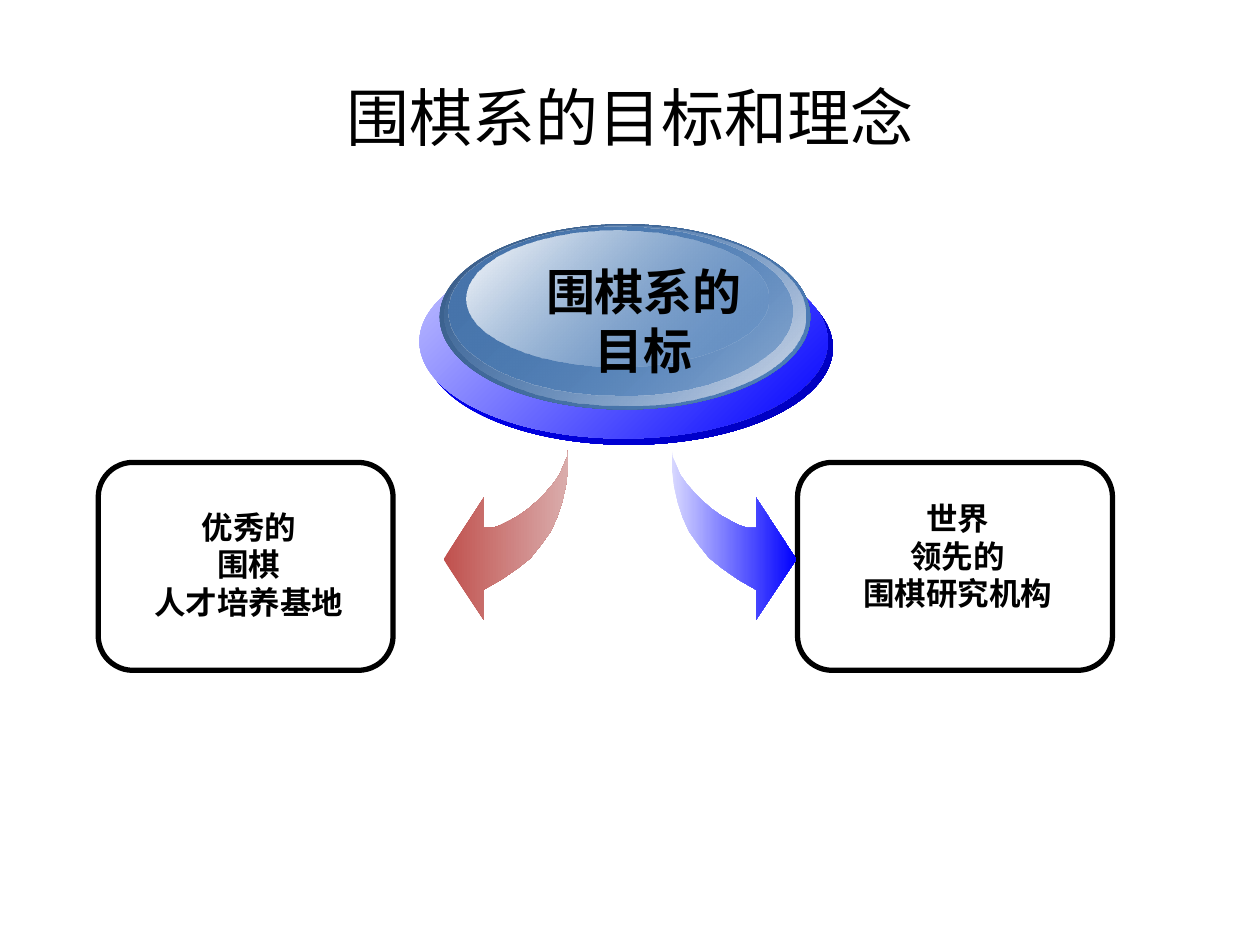
"""Build the slide on the goals and ideas of the Go department."""
from dataclasses import dataclass

from lxml import etree
from pptx import Presentation
from pptx.dml.color import RGBColor
from pptx.enum.shapes import MSO_SHAPE
from pptx.enum.text import MSO_ANCHOR, MSO_AUTO_SIZE, PP_ALIGN
from pptx.oxml.ns import qn
from pptx.util import Inches, Pt

OVAL = MSO_SHAPE.OVAL
ROUNDED = MSO_SHAPE.ROUNDED_RECTANGLE
CENTER = PP_ALIGN.CENTER
MIDDLE = MSO_ANCHOR.MIDDLE
FIT_SHAPE = MSO_AUTO_SIZE.SHAPE_TO_FIT_TEXT

BLACK = RGBColor(0x00, 0x00, 0x00)
WHITE = RGBColor(0xFF, 0xFF, 0xFF)
BLUE = RGBColor(0x00, 0x00, 0xFF)
DARK_BLUE = RGBColor(0x00, 0x00, 0xBA)
LILAC = RGBColor(0xC6, 0xC6, 0xFF)
PALE_BLUE = RGBColor(0xD8, 0xD8, 0xFF)
STEEL = RGBColor(0x4F, 0x81, 0xBD)
MID_STEEL = RGBColor(0x47, 0x75, 0xAB)
DARK_STEEL = RGBColor(0x39, 0x5C, 0x87)
PALE_STEEL = RGBColor(0xD7, 0xDE, 0xEB)
RED = RGBColor(0xC0, 0x50, 0x4D)
PALE_RED = RGBColor(0xDA, 0xAD, 0xAC)

TITLE_FORMAT = {"name": "Calibri", "size": Pt(36), "bold": False}
GOAL_FORMAT = {"name": "Calibri", "size": Pt(28), "bold": True}
BRANCH_FORMAT = {"name": "Arial", "size": Pt(18), "bold": True}

ARROW_POINTS = [
    (451, 356), (451, 371), (449, 386), (446, 399), (442, 411), (437, 422),
    (429, 433), (421, 443), (411, 451), (398, 460), (384, 468), (384, 492),
    (352, 444), (384, 395), (384, 419), (391, 419), (397, 417), (405, 413),
    (412, 409), (419, 404), (426, 398), (433, 391), (439, 384), (444, 377),
    (447, 370), (450, 363),
]
MIRROR_SUM = 984


@dataclass(frozen=True)
class Box:
    left: float
    top: float
    width: float
    height: float

    def lengths(self) -> list:
        return [Inches(v) for v in (self.left, self.top, self.width, self.height)]


@dataclass(frozen=True)
class Stop:
    color: RGBColor
    opacity: int = 100


@dataclass(frozen=True)
class Disc:
    box: Box
    start: Stop
    end: Stop


@dataclass(frozen=True)
class Label:
    box: Box
    lines: tuple
    font_format: dict
    wrap: bool = True


DISCS = [
    Disc(Box(3.37, 1.99, 3.24, 1.54), Stop(BLUE), Stop(DARK_BLUE)),
    Disc(Box(3.33, 1.94, 3.24, 1.54), Stop(LILAC), Stop(BLUE)),
    Disc(Box(3.49, 1.78, 2.94, 1.47), Stop(DARK_STEEL), Stop(STEEL)),
    Disc(Box(3.53, 1.79, 2.86, 1.43), Stop(STEEL, 0), Stop(PALE_STEEL)),
    Disc(Box(3.56, 1.8, 2.73, 1.34), Stop(MID_STEEL), Stop(STEEL, 48)),
    Disc(Box(3.7, 1.83, 2.4, 1.08), Stop(WHITE), Stop(STEEL, 38)),
]
FRAMES = [Box(6.33, 3.67, 2.5, 1.65), Box(0.78, 3.67, 2.34, 1.65)]
LABELS = [
    Label(Box(0.86, 3.98, 2.23, 1.01), ("优秀的", "围棋", "人才培养基地"), BRANCH_FORMAT),
    Label(Box(4.22, 2.03, 1.78, 1.04), ("围棋系的", "目标"), GOAL_FORMAT, False),
    Label(Box(6.25, 3.91, 2.7, 1.01), ("世界", "领先的", "围棋研究机构"), BRANCH_FORMAT),
]


def write_lines(frame, lines: tuple, font_format: dict) -> None:
    frame.text = "\n".join(lines)
    for paragraph in frame.paragraphs:
        paragraph.alignment = CENTER
        font = paragraph.runs[0].font
        for key, value in font_format.items():
            setattr(font, key, value)
        font.color.rgb = BLACK


def paint_gradient(shape, start: Stop, end: Stop, angle: int) -> None:
    shape.shadow.inherit = False
    shape.line.fill.background()
    shape.fill.gradient()
    shape.fill.gradient_angle = angle
    for gradient_stop, stop in zip(shape.fill.gradient_stops, (start, end)):
        gradient_stop.color.rgb = stop.color
    colors = shape.element.spPr.iter(qn("a:srgbClr"))
    for color, stop in zip(list(colors), (start, end)):
        if stop.opacity < 100:
            etree.SubElement(color, qn("a:alpha"), val=str(stop.opacity * 1000))


def add_frame(slide, box: Box) -> None:
    frame = slide.shapes.add_shape(ROUNDED, *box.lengths())
    frame.shadow.inherit = False
    frame.fill.background()
    frame.line.color.rgb = BLACK
    frame.line.width = Pt(3)


def add_arrow(slide, points: list, start: Stop, end: Stop) -> None:
    builder = slide.shapes.build_freeform(*points[0], scale=Inches(0.01))
    builder.add_line_segments(points[1:], close=True)
    paint_gradient(builder.convert_to_shape(), start, end, 0)


def add_disc(slide, disc: Disc) -> None:
    oval = slide.shapes.add_shape(OVAL, *disc.box.lengths())
    paint_gradient(oval, disc.start, disc.end, 315)


def add_label(slide, label: Label) -> None:
    frame = slide.shapes.add_textbox(*label.box.lengths()).text_frame
    frame.word_wrap = label.wrap
    frame.auto_size = FIT_SHAPE
    write_lines(frame, label.lines, label.font_format)


def main() -> None:
    deck = Presentation()
    deck.slide_width, deck.slide_height = Inches(10), Inches(7.5)
    slide = deck.slides.add_slide(deck.slide_layouts[5])

    title = slide.shapes.title
    title.left, title.top, title.width, title.height = Box(0.5, 0.3, 9, 1.25).lengths()
    title.text_frame.vertical_anchor = MIDDLE
    write_lines(title.text_frame, ("围棋系的目标和理念",), TITLE_FORMAT)

    for box in FRAMES:
        add_frame(slide, box)
    mirrored = [(MIRROR_SUM - x, y) for x, y in ARROW_POINTS]
    add_arrow(slide, ARROW_POINTS, Stop(RED), Stop(PALE_RED))
    add_arrow(slide, mirrored, Stop(PALE_BLUE), Stop(BLUE))
    for disc in DISCS:
        add_disc(slide, disc)
    for label in LABELS:
        add_label(slide, label)
    deck.save("out.pptx")


if __name__ == "__main__":
    main()
